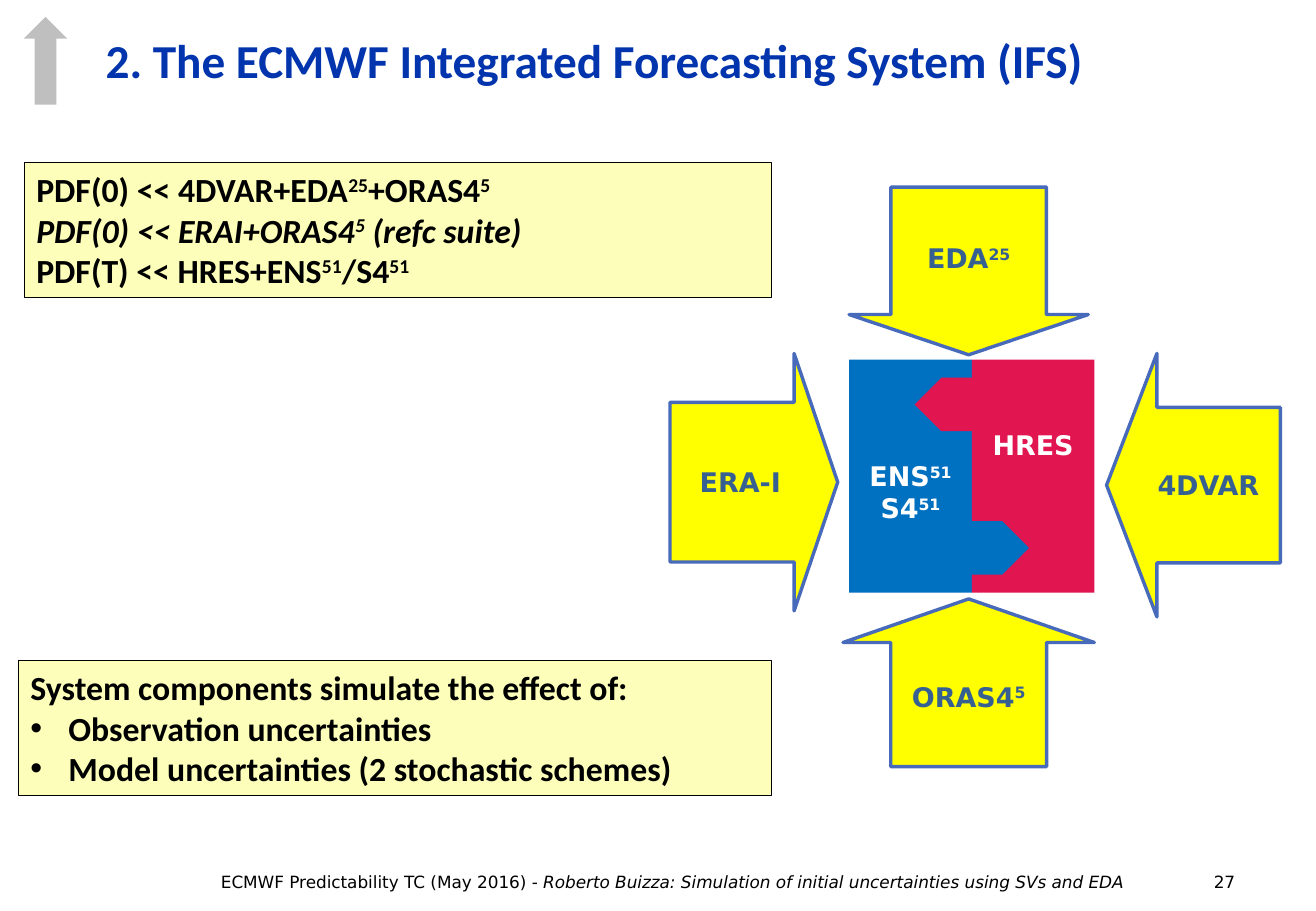
from lxml.etree import SubElement
from pptx import Presentation
from pptx.dml.color import RGBColor
from pptx.enum.shapes import MSO_SHAPE as Shape
from pptx.enum.text import MSO_ANCHOR as Anchor, MSO_AUTO_SIZE as AutoSize, PP_ALIGN as Align
from pptx.oxml.ns import qn
from pptx.util import Pt

COLOURS = {
    "title": "0234AD", "text": "000000", "note": "FCFEB9", "white": "FFFFFF",
    "ensemble": "0070C0", "forecast": "E1154F", "emblem": "BFBFBF",
    "arrow": "FFFF00", "arrow_line": "486ABB", "arrow_text": "376092",
}
HEADING_FONT, LABEL_FONT = "Calibri", "DejaVu Sans"


def colour(name):
    return RGBColor.from_string(COLOURS[name])


class SlideBuilder:
    def __init__(self, presentation):
        self.slide = presentation.slides.add_slide(presentation.slide_layouts[1])

    def place(self, shape, box):
        shape.left, shape.top, shape.width, shape.height = map(Pt, box)

    def paint(self, shape, fill, line=None, width=0):
        shape.fill.solid()
        shape.fill.fore_color.rgb = colour(fill)
        if line:
            shape.line.color.rgb = colour(line)
            shape.line.width = Pt(width)
        else:
            shape.line.fill.background()

    def fill_paragraph(self, paragraph, text, font, size, color, italic=None):
        """Parts between carets become superscripts."""
        for index, part in enumerate(text.split("^")):
            if part:
                run = paragraph.add_run()
                run.text = part
                if index % 2:
                    run._r.get_or_add_rPr().set("baseline", "30000")
        style = paragraph.font
        style.name, style.size, style.bold = font, Pt(size), True
        style.color.rgb = colour(color)
        if italic is not None:
            style.italic = italic

    def paragraphs(self, frame, count):
        return [frame.paragraphs[0]] + [frame.add_paragraph() for _ in range(count - 1)]

    def title(self, text, box):
        shape = self.slide.shapes.title
        self.place(shape, box)
        frame = shape.text_frame
        frame.auto_size, frame.vertical_anchor = AutoSize.NONE, Anchor.MIDDLE
        paragraph = frame.paragraphs[0]
        paragraph.alignment, paragraph.line_spacing = Align.LEFT, Pt(32)
        self.fill_paragraph(paragraph, text, HEADING_FONT, 28, "title")

    def shape(self, kind, box, fill, line=None, width=0):
        shape = self.slide.shapes.add_shape(kind, *map(Pt, box))
        shape.shadow.inherit = False
        self.paint(shape, fill, line, width)
        return shape

    def label(self, shape, lines, color):
        frame = shape.text_frame
        frame.word_wrap, frame.vertical_anchor = True, Anchor.MIDDLE
        for paragraph, text in zip(self.paragraphs(frame, len(lines)), lines):
            paragraph.alignment = Align.CENTER
            self.fill_paragraph(paragraph, text, LABEL_FONT, 16, color)

    def arrow(self, kind, box, adjustments, text):
        shape = self.shape(kind, box, "arrow", "arrow_line", 2)
        for index, value in enumerate(adjustments):
            shape.adjustments[index] = value
        self.label(shape, [text], "arrow_text")

    def formulas(self, box, lines):
        shape = self.shape(Shape.RECTANGLE, box, "note", "text", 0.75)
        frame = shape.text_frame
        frame.word_wrap, frame.vertical_anchor = True, Anchor.TOP
        for paragraph, (text, italic) in zip(self.paragraphs(frame, len(lines)), lines):
            paragraph.alignment = Align.LEFT
            self.fill_paragraph(paragraph, text, HEADING_FONT, 20, "text", italic)

    def bullet_list(self, box, heading, items):
        shape = self.slide.placeholders[1]
        self.place(shape, box)
        self.paint(shape, "note", "text", 0.75)
        frame = shape.text_frame
        frame.auto_size, frame.vertical_anchor = AutoSize.NONE, Anchor.TOP
        lines = [heading, *items]
        for index, paragraph in enumerate(self.paragraphs(frame, len(lines))):
            paragraph.space_before = Pt(0)
            properties = paragraph._p.get_or_add_pPr()
            indent = Pt(22.5) if index else 0
            properties.set("marL", str(indent))
            properties.set("indent", str(-indent))
            if index:
                SubElement(properties, qn("a:buChar"), char="•")
            else:
                SubElement(properties, qn("a:buNone"))
            self.fill_paragraph(paragraph, lines[index], HEADING_FONT, 20, "text")

    def footer(self, box, course, talk, number, number_tab):
        frame = self.slide.shapes.add_textbox(*map(Pt, box)).text_frame
        frame.word_wrap = True
        paragraph = frame.paragraphs[0]
        tabs = SubElement(paragraph._p.get_or_add_pPr(), qn("a:tabLst"))
        SubElement(tabs, qn("a:tab"), pos=str(Pt(number_tab)), algn="l")
        for text, italic in ((course, False), (talk, True), ("\t" + number, False)):
            run = paragraph.add_run()
            run.text, run.font.italic = text, italic
        paragraph.font.name, paragraph.font.size = LABEL_FONT, Pt(10)
        paragraph.font.color.rgb = colour("text")


def main():
    presentation = Presentation()
    presentation.slide_width, presentation.slide_height = Pt(780), Pt(540)
    builder = SlideBuilder(presentation)

    builder.footer((123.84, 513.36, 648.72, 19.44), "ECMWF Predictability TC (May 2016) - ",
                   "Roberto Buizza: Simulation of initial uncertainties using SVs and EDA",
                   "27", 588.5)
    builder.shape(Shape.UP_ARROW, (14, 10, 26, 52), "emblem")
    builder.title("2. The ECMWF Integrated Forecasting System (IFS)",
                  (55.44, 12.24, 714.24, 48.24))

    middle, top, width, height = 576, 213.1, 72.7, 138.2
    ensemble = builder.shape(Shape.RECTANGLE, (middle - width, top, width, height), "ensemble")
    ensemble.text_frame.margin_top = Pt(22)
    builder.label(ensemble, ["ENS^51^", "S4^51^"], "white")
    forecast = builder.shape(Shape.RECTANGLE, (middle, top, width, height), "forecast")
    forecast.text_frame.margin_bottom = Pt(41)
    builder.label(forecast, ["HRES"], "white")
    tab_width, tab_height, overlap = 35.3, 31.7, 1.4
    forecast_tab = builder.shape(Shape.PENTAGON, (middle + overlap - tab_width, top + 10.8,
                                                  tab_width, tab_height), "forecast")
    forecast_tab.rotation = 180
    builder.shape(Shape.PENTAGON, (middle - overlap, top + 95.8, tab_width, tab_height),
                  "ensemble")

    for kind, box, adjustments, text in (
        (Shape.DOWN_ARROW, (503.3, 110.9, 141.8, 99.4), (0.65, 0.24), "EDA^25^"),
        (Shape.UP_ARROW, (499.7, 355, 149, 99.4), (0.62, 0.26), "ORAS4^5^"),
        (Shape.RIGHT_ARROW, (397.1, 209.5, 99.4, 152.6), (0.62, 0.26), "ERA-I"),
        (Shape.LEFT_ARROW, (655.9, 209.5, 103, 156.2), (0.59, 0.29), "4DVAR"),
    ):
        builder.arrow(kind, box, adjustments, text)

    builder.formulas((14.4, 96.5, 442.8, 79.9), [
        ("PDF(0) << 4DVAR+EDA^25^+ORAS4^5^", False),
        ("PDF(0) << ERAI+ORAS4^5^ (refc suite)", True),
        ("PDF(T) << HRES+ENS^51^/S4^51^", False),
    ])
    builder.bullet_list((10.8, 391.7, 446.4, 79.9), "System components simulate the effect of:",
                        ["Observation uncertainties",
                         "Model uncertainties (2 stochastic schemes)"])
    presentation.save("out.pptx")


if __name__ == "__main__":
    main()
